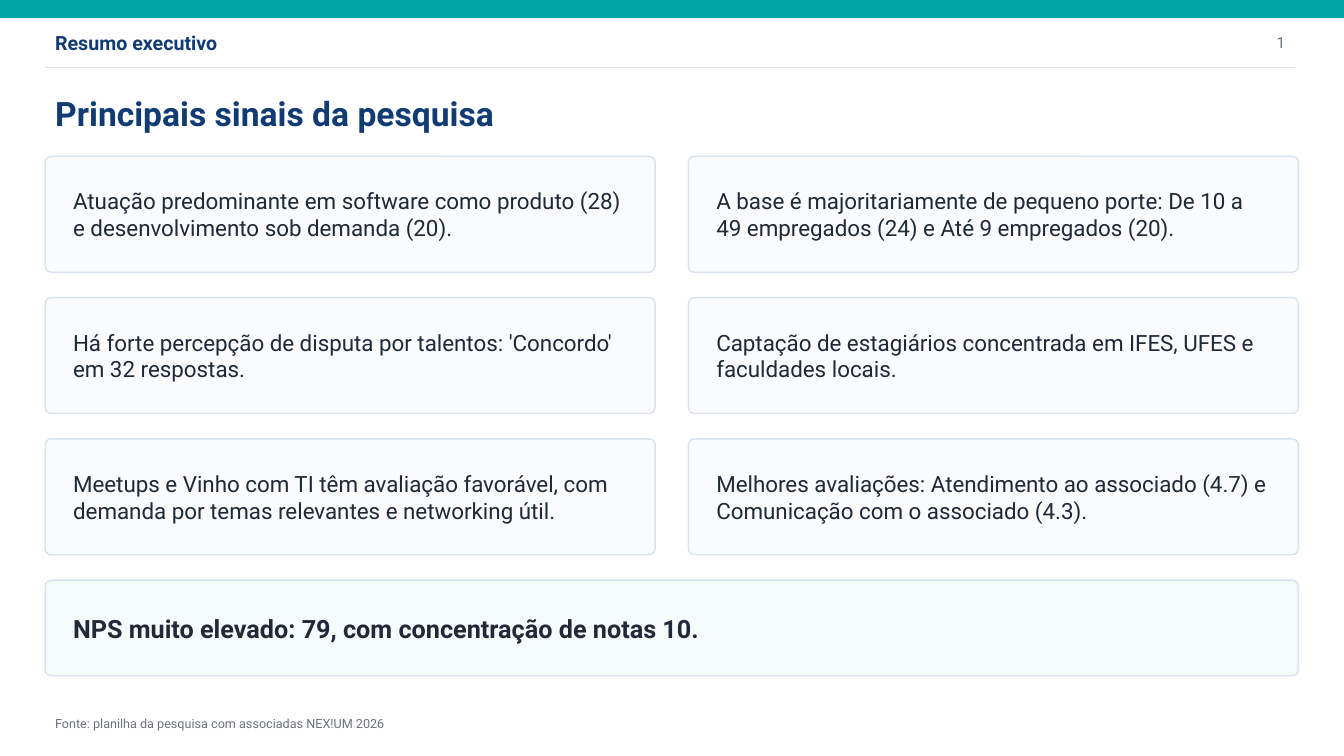
from pptx import Presentation
from pptx.dml.color import RGBColor
from pptx.enum.shapes import MSO_CONNECTOR as Conn, MSO_SHAPE as Kind
from pptx.enum.text import MSO_ANCHOR as Anchor, MSO_AUTO_SIZE as Fit, PP_ALIGN as Align
from pptx.oxml.ns import qn
from pptx.util import Cm, Pt
from lxml.etree import SubElement

NAVY, TEAL, INK, GREY, EDGE = "103B73", "00A6A6", "1F2937", "6B7280", "D9E2EF"
LEFT, TOP, WIDE, HIGH = 1.14, 3.94, 15.37, 2.92
STEP_X, STEP_Y = 16.21, 3.56
NOTES = [
    "Atuação predominante em software como produto (28) e desenvolvimento sob demanda (20).",
    "A base é majoritariamente de pequeno porte: De 10 a 49 empregados (24) e Até 9 empregados (20).",
    "Há forte percepção de disputa por talentos: 'Concordo' em 32 respostas.",
    "Captação de estagiários concentrada em IFES, UFES e faculdades locais.",
    "Meetups e Vinho com TI têm avaliação favorável, com demanda por temas relevantes e networking útil.",
    "Melhores avaliações: Atendimento ao associado (4.7) e Comunicação com o associado (4.3).",
]


def tint(code):
    """Turn a hex string into a colour."""
    return RGBColor.from_string(code)


class Page:
    """Hold the font and the current slide, and draw its elements."""

    def __init__(self, deck, font):
        self.font = font
        self.slide = deck.slides.add_slide(deck.slide_layouts[5])
        self.shapes = self.slide.shapes

    def letter(self, shape, text, size, color, bold=False, align=Align.LEFT, inset=0.25):
        """Fill a shape with one styled paragraph."""
        frame = shape.text_frame
        frame.text = text
        look = {"word_wrap": True, "auto_size": Fit.NONE, "vertical_anchor": Anchor.MIDDLE,
                "margin_left": Cm(inset), "margin_right": Cm(inset),
                "margin_top": Cm(0.13), "margin_bottom": Cm(0.13)}
        for key, value in look.items():
            setattr(frame, key, value)
        line = frame.paragraphs[0]
        line.alignment = align
        font = line.runs[0].font
        for key, value in {"name": self.font, "size": Pt(size), "bold": bold}.items():
            setattr(font, key, value)
        font.color.rgb = tint(color)

    def title(self, box, text, size, color):
        """Place and style the title placeholder."""
        shape = self.shapes.title
        for key, value in zip(("left", "top", "width", "height"), box):
            setattr(shape, key, Cm(value))
        self.letter(shape, text, size, color, bold=True)

    def label(self, box, text, size, color, **style):
        """Add a text box."""
        self.letter(self.shapes.add_textbox(*map(Cm, box)), text, size, color, **style)

    def block(self, kind, box, fill):
        """Add a plain filled shape."""
        shape = self.shapes.add_shape(kind, *map(Cm, box))
        shape.shadow.inherit = False
        shape.fill.solid()
        shape.fill.fore_color.rgb = tint(fill)
        shape.line.fill.background()
        return shape

    def card(self, box, fill, text, size, bold=False):
        """Add an outlined rounded card with text."""
        shape = self.block(Kind.ROUNDED_RECTANGLE, box, fill)
        shape.adjustments[0] = 0.15 / box[3]
        shape.line.color.rgb = tint(EDGE)
        shape.line.width = Pt(1)
        self.letter(shape, text, size, INK, bold, inset=0.66)

    def rule(self, ends, color):
        """Add a thin straight line."""
        line = self.shapes.add_connector(Conn.STRAIGHT, *map(Cm, ends))
        line.line.color.rgb = tint(color)
        line.line.width = Pt(1)
        SubElement(line._element.spPr, qn("a:effectLst"))


def main():
    """Build and save the summary slide."""
    deck = Presentation()
    deck.slide_width, deck.slide_height = Cm(33.87), Cm(19.05)
    page = Page(deck, "Roboto")
    page.block(Kind.RECTANGLE, (0, 0, 33.87, 0.46), TEAL)
    page.label((LEFT, 0.71, 11.18, 0.71), "Resumo executivo", 14, NAVY, bold=True)
    page.label((29.46, 0.71, 3.18, 0.71), "1", 11, GREY, align=Align.RIGHT)
    page.rule((LEFT, 1.7, 32.64, 1.7), EDGE)
    page.title((LEFT, 2.29, 13.97, 1.14), "Principais sinais da pesquisa", 24, NAVY)
    for i, note in enumerate(NOTES):
        row, col = divmod(i, 2)
        page.card((LEFT + col * STEP_X, TOP + row * STEP_Y, WIDE, HIGH), "F9FBFD", note, 16)
    page.card((LEFT, TOP + 3 * STEP_Y, STEP_X + WIDE, 2.41), "F5FAFA",
              "NPS muito elevado: 79, com concentração de notas 10.", 18, bold=True)
    page.label((LEFT, 17.98, 17.27, 0.51),
               "Fonte: planilha da pesquisa com associadas NEX!UM 2026", 9, GREY)
    deck.save("out.pptx")


if __name__ == "__main__":
    main()
